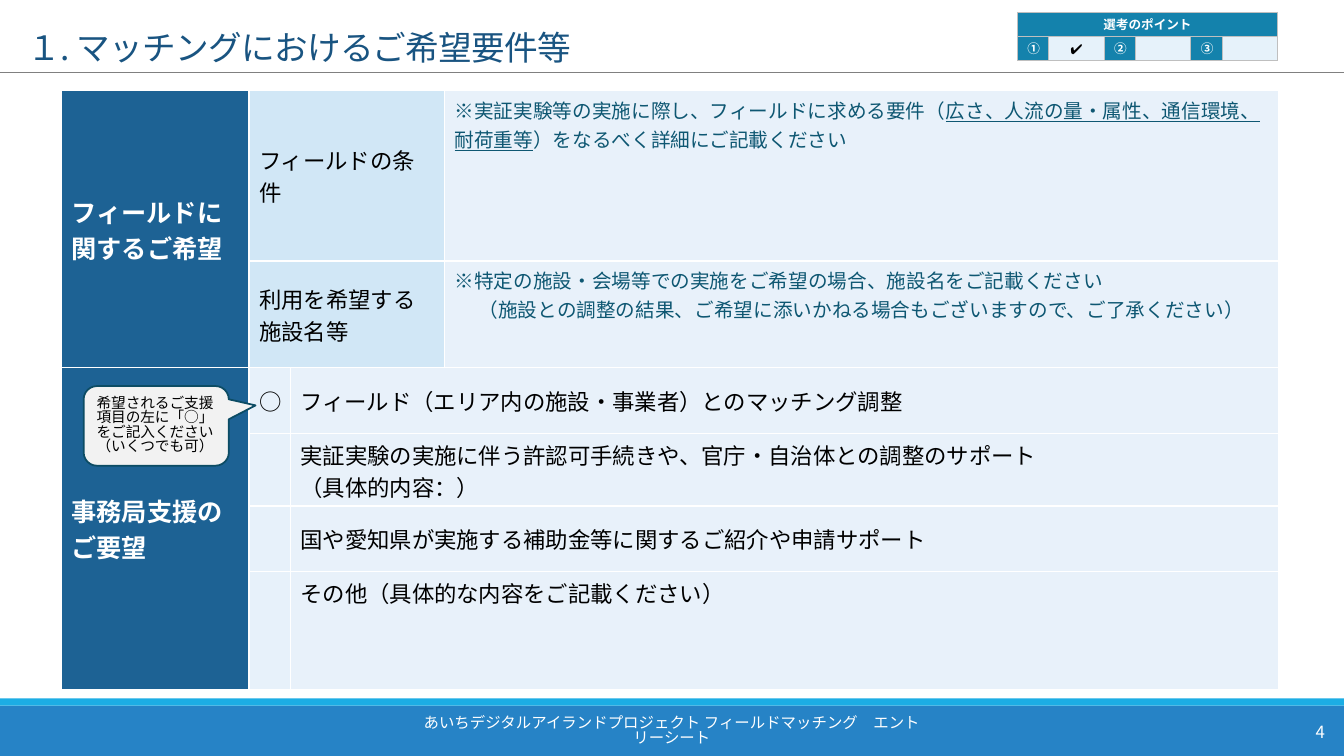
from dataclasses import dataclass

import pptx
import pptx.dml.color
import pptx.enum.shapes
import pptx.enum.text
import pptx.oxml
import pptx.oxml.ns
import pptx.util
from lxml import etree

Inches, Pt = pptx.util.Inches, pptx.util.Pt
MSO_SHAPE = pptx.enum.shapes.MSO_SHAPE
PP_ALIGN, ANCHOR = pptx.enum.text.PP_ALIGN, pptx.enum.text.MSO_ANCHOR
qn = pptx.oxml.ns.qn

FONT = "Noto Sans CJK JP"
COLORS = {
    "white": "FFFFFF", "black": "000000", "title": "195481", "rule": "808080",
    "footer": "2683C6", "stripe": "1CADE4", "heading": "1D6294",
    "label": "D1E7F6", "entry": "E8F1FA", "mark": "E7F1FA", "note": "0E5772",
    "point": "1482AC", "blank": "E6F2FA", "grid": "BFBFBF",
    "callout": "F2F2F2", "callout_line": "0C4C64",
}


@dataclass(frozen=True)
class Style:
    size: float
    color: str = "black"
    bold: bool = False
    align: PP_ALIGN = PP_ALIGN.LEFT
    anchor: ANCHOR = ANCHOR.MIDDLE
    line_spacing: float = 1.0


@dataclass(frozen=True)
class Cell:
    row: int
    col: int
    lines: tuple[str, ...]
    fill: str
    style: Style
    rows: int = 1
    cols: int = 1


HEADING = Style(18, "white", bold=True)
BODY = Style(16)
BODY_TOP = Style(16, anchor=ANCHOR.TOP)
NOTE = Style(14, "note", anchor=ANCHOR.TOP)
POINT = Style(9, "white", bold=True, align=PP_ALIGN.CENTER)
CHECK = Style(10, bold=True, align=PP_ALIGN.CENTER)

SUPPORTS = [
    ("○", ("フィールド（エリア内の施設・事業者）とのマッチング調整",), BODY),
    ("", ("実証実験の実施に伴う許認可手続きや、官庁・自治体との調整のサポート",
          "（具体的内容：）"), BODY_TOP),
    ("", ("国や愛知県が実施する補助金等に関するご紹介や申請サポート",), BODY),
    ("", ("その他（具体的な内容をご記載ください）",), BODY_TOP),
]
REQUESTS = [
    Cell(0, 0, ("フィールドに", "関するご希望"), "heading", HEADING, rows=2),
    Cell(0, 1, ("フィールドの条件",), "label", BODY, cols=2),
    Cell(0, 3, ("※実証実験等の実施に際し、フィールドに求める要件（"
                "_広さ、人流の量・属性、通信環境、耐荷重等_"
                "）をなるべく詳細にご記載ください",), "entry", NOTE),
    Cell(1, 1, ("利用を希望する施設名等",), "label", BODY, cols=2),
    Cell(1, 3, ("※特定の施設・会場等での実施をご希望の場合、施設名をご記載ください",
                "　 （施設との調整の結果、ご希望に添いかねる場合もございますので、ご了承ください）"),
         "entry", NOTE),
    Cell(2, 0, ("事務局支援の", "ご要望"), "heading", HEADING, rows=4),
]
for row, (mark, lines, style) in enumerate(SUPPORTS, start=2):
    REQUESTS += [Cell(row, 1, (mark,), "mark", BODY),
                 Cell(row, 2, lines, "entry", style, cols=2)]

POINTS = [Cell(0, 0, ("選考のポイント",), "point", POINT, cols=6)]
for i, (number, check) in enumerate([("①", "✔"), ("②", ""), ("③", "")]):
    POINTS += [Cell(1, 2 * i, (number,), "point", POINT),
               Cell(1, 2 * i + 1, (check,), "blank", CHECK)]


def rgb(name: str) -> pptx.dml.color.RGBColor:
    return pptx.dml.color.RGBColor.from_string(COLORS[name])


def write(tf, lines: tuple[str, ...], style: Style) -> None:
    """Fill a text frame, one paragraph a line; text between underscores is underlined."""
    for i, line in enumerate(lines):
        p = tf.add_paragraph() if i else tf.paragraphs[0]
        p.alignment, p.line_spacing = style.align, style.line_spacing
        font = p.font
        font.size, font.bold, font.name = Pt(style.size), style.bold, FONT
        font.color.rgb = rgb(style.color)
        defaults = p._p.pPr.find(qn("a:defRPr"))
        etree.SubElement(defaults, qn("a:ea"), typeface=FONT)
        if not line:
            etree.SubElement(p._p, qn("a:endParaRPr"), sz=str(int(style.size * 100)))
            continue
        for j, part in enumerate(line.split("_")):
            r = p.add_run()
            r.text = part
            if j % 2:
                r.font.underline = True


def add_text(s, box: tuple[float, ...], text: str, style: Style):
    tf = s.shapes.add_textbox(*map(Inches, box)).text_frame
    tf.word_wrap, tf.vertical_anchor = True, style.anchor
    write(tf, (text,), style)
    return tf


def add_bar(s, top: float, height: float, color: str) -> None:
    sp = s.shapes.add_shape(MSO_SHAPE.RECTANGLE, 0, Inches(top), Inches(13.33), Inches(height))
    sp.shadow.inherit = False
    sp.fill.solid()
    sp.fill.fore_color.rgb = rgb(color)
    sp.line.fill.background()


def set_borders(cell, color: str, width: float) -> None:
    props = cell._tc.get_or_add_tcPr()
    for i, side in enumerate(("lnL", "lnR", "lnT", "lnB")):
        line = etree.Element(qn(f"a:{side}"), w=str(Pt(width)))
        fill = etree.SubElement(line, qn("a:solidFill"))
        etree.SubElement(fill, qn("a:srgbClr"), val=COLORS[color])
        props.insert(i, line)


def add_table(s, left: float, top: float, widths: list[float], heights: list[float],
              cells: list[Cell], border: tuple[str, float], inset: float) -> None:
    """Draw a table whose cells share a border and a top and bottom inset."""
    table = s.shapes.add_table(len(heights), len(widths), Inches(left), Inches(top),
                               Inches(sum(widths)), Inches(sum(heights))).table
    table.first_row = table.horz_banding = False
    for column, width in zip(table.columns, widths):
        column.width = Inches(width)
    for row, height in zip(table.rows, heights):
        row.height = Inches(height)
    for item in cells:
        cell = table.cell(item.row, item.col)
        if item.rows * item.cols > 1:
            cell.merge(table.cell(item.row + item.rows - 1, item.col + item.cols - 1))
        cell.fill.solid()
        cell.fill.fore_color.rgb = rgb(item.fill)
        cell.vertical_anchor = item.style.anchor
        cell.margin_top = cell.margin_bottom = Inches(inset)
        write(cell.text_frame, item.lines, item.style)
    for cell in table.iter_cells():
        set_borders(cell, *border)


def add_callout(s) -> None:
    sp = s.shapes.add_shape(MSO_SHAPE.ROUNDED_RECTANGULAR_CALLOUT,
                            Inches(0.83), Inches(3.83), Inches(1.44), Inches(0.79))
    for i, value in enumerate((0.684, -0.257, 0.167)):
        sp.adjustments[i] = value
    sp.shadow.inherit = False
    sp.fill.solid()
    sp.fill.fore_color.rgb = rgb("callout")
    sp.line.color.rgb = rgb("callout_line")
    sp.line.width = Pt(1.25)
    tf = sp.text_frame
    tf.word_wrap, tf.vertical_anchor = True, ANCHOR.MIDDLE
    tf.margin_left = tf.margin_right = Inches(0.09)
    write(tf, ("希望されるご支援項目の左に「○」をご記入ください", "（いくつでも可）"),
          Style(10.5, line_spacing=0.82))


def main() -> None:
    prs = pptx.Presentation()
    prs.slide_width, prs.slide_height = Inches(13.33), Inches(7.5)
    s = prs.slides.add_slide(prs.slide_layouts[6])

    add_bar(s, 7, 0.5, "footer")
    add_bar(s, 6.93, 0.07, "stripe")
    rule = s.shapes.add_connector(pptx.enum.shapes.MSO_CONNECTOR.STRAIGHT,
                                  0, Inches(0.72), Inches(13.33), Inches(0.72))
    rule.line.color.rgb, rule.line.width = rgb("rule"), Pt(0.5)
    etree.SubElement(rule._element.spPr, qn("a:effectLst"))

    title = add_text(s, (0.17, 0, 13.16, 0.72), "１. マッチングにおけるご希望要件等",
                     Style(24, "title", anchor=ANCHOR.BOTTOM, line_spacing=0.85))
    title.paragraphs[0].runs[0].font._element.set("spc", "-50")

    add_table(s, 0.61, 0.9, [1.86, 0.41, 1.53, 8.27], [1.69, 1.06, 0.65, 0.72, 0.65, 1.17],
              REQUESTS, ("white", 1), 0.05)
    add_text(s, (4.03, 7.06, 5.27, 0.4),
             "あいちデジタルアイランドプロジェクト フィールドマッチング　エントリーシート",
             Style(11, "white", align=PP_ALIGN.CENTER, line_spacing=0.82))
    add_text(s, (11.81, 7.06, 1.43, 0.4), "4", Style(12, "white", align=PP_ALIGN.RIGHT))
    add_callout(s)
    add_table(s, 10.09, 0.12, [0.31, 0.55] * 3, [0.24] * 2, POINTS, ("grid", 0.5), 0.02)
    prs.save("out.pptx")


if __name__ == "__main__":
    main()
